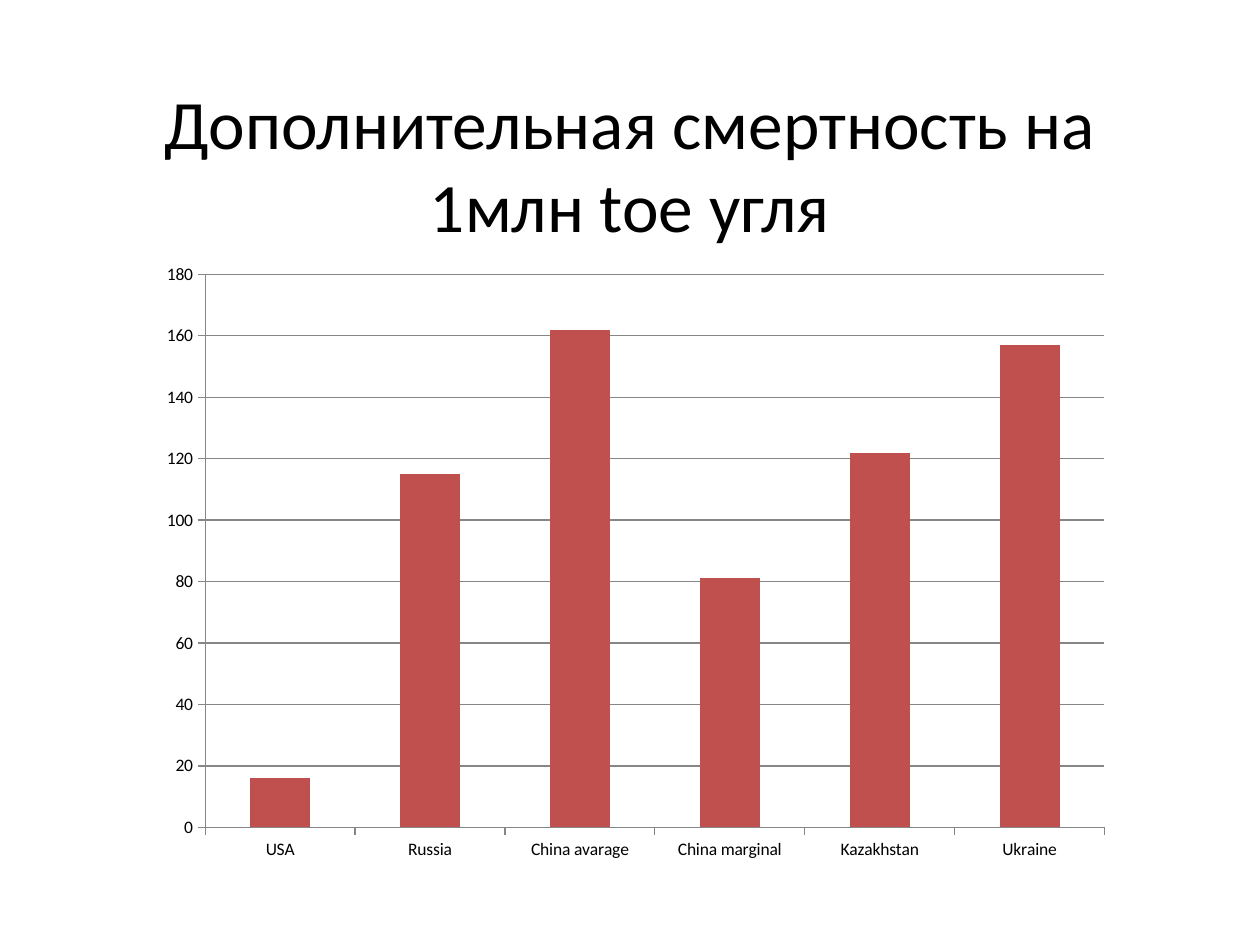
import pptx
import pptx.util
import pptx.chart.data
import pptx.dml.color
import pptx.enum.chart
import pptx.enum.text

Cm = pptx.util.Cm
Pt = pptx.util.Pt
RGB = pptx.dml.color.RGBColor.from_string
colors = {"text": "000000", "bar": "C0504D", "line": "868686"}
deaths = {
    "USA": 16,
    "Russia": 115,
    "China avarage": 162,
    "China marginal": 81,
    "Kazakhstan": 122,
    "Ukraine": 157,
}

deck = pptx.Presentation()
deck.slide_width = Cm(25.4)
deck.slide_height = Cm(19.05)
slide = deck.slides.add_slide(deck.slide_layouts[5])

title = slide.shapes.title
title.left, title.top = Cm(1.9), Cm(1.7)
title.width, title.height = Cm(21.6), Cm(3.18)
frame = title.text_frame
frame.text = "Дополнительная смертность на 1млн toe угля"
frame.word_wrap = True
frame.vertical_anchor = pptx.enum.text.MSO_ANCHOR.MIDDLE
head = frame.paragraphs[0]
head.alignment = pptx.enum.text.PP_ALIGN.CENTER
head.font.name = "Calibri"
head.font.size = Pt(39.6)
head.font.color.rgb = RGB(colors["text"])

data = pptx.chart.data.CategoryChartData(number_format="0")
data.categories = list(deaths)
data.add_series("Series 1", list(deaths.values()))
chart = slide.shapes.add_chart(
    pptx.enum.chart.XL_CHART_TYPE.COLUMN_CLUSTERED,
    Cm(2.97), Cm(5.08), Cm(19.69), Cm(12.5), data,
).chart
chart.has_title = False
chart.has_legend = False
chart.font.name = "Calibri"
chart.font.size = Pt(10)
chart.font.color.rgb = RGB(colors["text"])

plot = chart.plots[0]
plot.gap_width = 150
plot.vary_by_categories = False
bars = plot.series[0].format.fill
bars.solid()
bars.fore_color.rgb = RGB(colors["bar"])

scale = chart.value_axis
scale.minimum_scale = 0
scale.maximum_scale = 180
scale.major_unit = 20
scale.has_major_gridlines = True
scale.tick_labels.number_format = "0"
scale.tick_labels.number_format_is_linked = False
for axis in (scale, chart.category_axis):
    axis.major_tick_mark = pptx.enum.chart.XL_TICK_MARK.OUTSIDE
for part in (scale, chart.category_axis, scale.major_gridlines):
    part.format.line.color.rgb = RGB(colors["line"])
    part.format.line.width = Pt(0.75)

deck.save("out.pptx")
